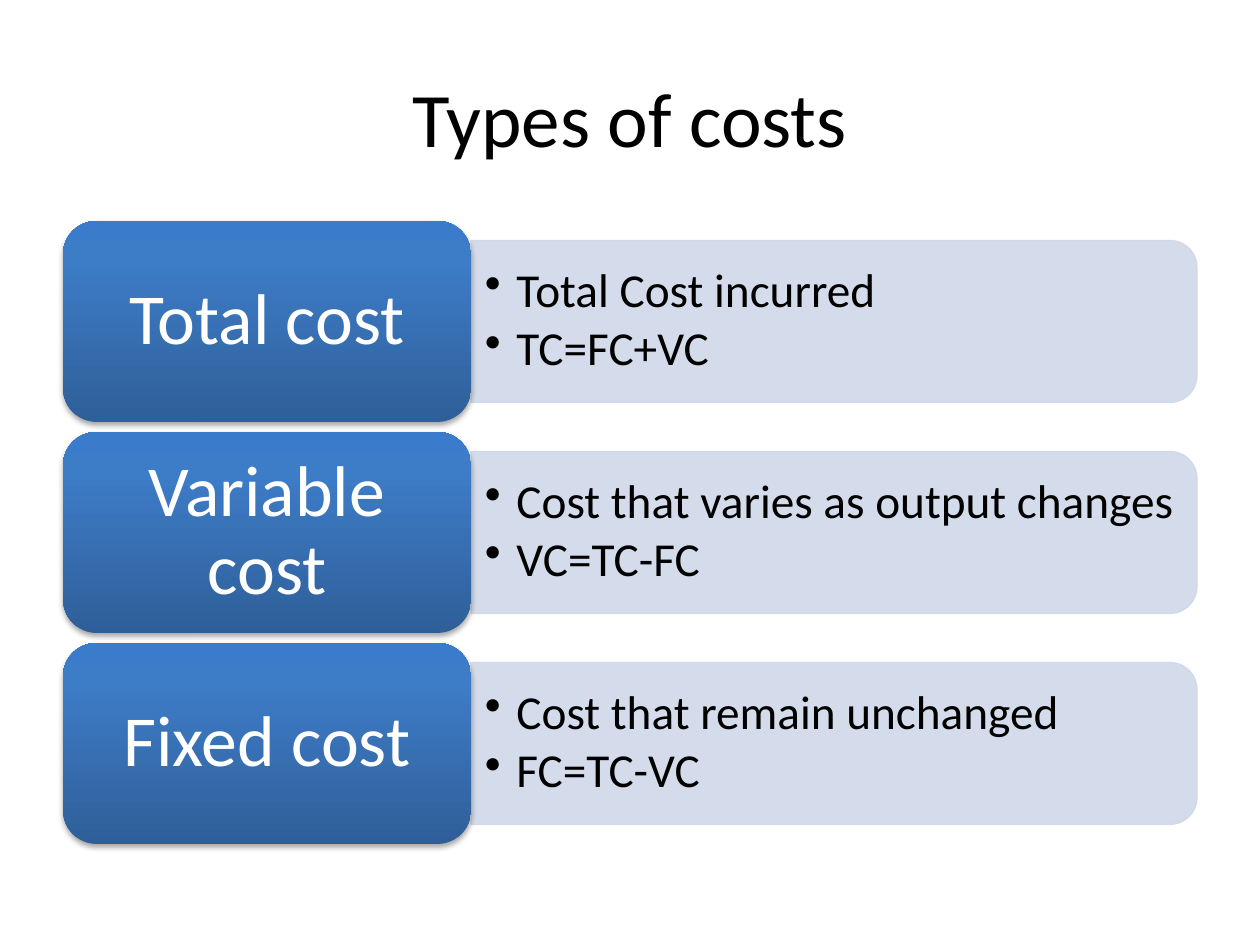
"""Build the slide on types of costs."""
from pptx import Presentation
from pptx import util as u
from pptx.dml.color import RGBColor
from pptx.enum import shapes, text
from pptx.oxml import parse_xml
from pptx.oxml.ns import nsdecls, qn
from lxml import etree

SCALE = 914400 / 126
FONT = "Calibri"
STOPS = [(0, "2F5F99"), (80, "3D7CC7"), (100, "3A7CCB")]
ROWS = [
    ("Total cost", ["Total Cost incurred", "TC=FC+VC"]),
    ("Variable cost", ["Cost that varies as output changes", "VC=TC-FC"]),
    ("Fixed cost", ["Cost that remain unchanged", "FC=TC-VC"]),
]
LEFT, TOP, PITCH = 63, 221, 211
PILL_W, PILL_H = 408, 201
PANEL_W, PANEL_H = 726, 162


def px(num):
    """Turn pixels into EMU."""
    return u.Emu(round(num * SCALE))


def box(*nums):
    """Turn left, top, width and height into EMU."""
    return [px(num) for num in nums]


def color(code):
    """Turn a hex string into a colour."""
    return RGBColor.from_string(code)


def style(frame, size, code, align, pad):
    """Format all the text of a frame."""
    frame.word_wrap = True
    frame.vertical_anchor = text.MSO_ANCHOR.MIDDLE
    frame.margin_left = frame.margin_right = px(pad[0])
    frame.margin_top = frame.margin_bottom = px(pad[1])
    for para in frame.paragraphs:
        para.alignment = align
        for run in para.runs:
            run.font.name = FONT
            run.font.size = u.Pt(size)
            run.font.color.rgb = color(code)


def add_title(slide, words):
    """Place and format the title."""
    title = slide.shapes.title
    title.left, title.top, title.width, title.height = box(63, 38, 1134, 157)
    title.text_frame.text = words
    style(title.text_frame, 44, "000000", text.PP_ALIGN.CENTER, (13, 6))


def add_panel(slide, left, mid):
    """Draw a pale panel with round corners on its right side."""
    kind = shapes.MSO_SHAPE.ROUND_2_SAME_RECTANGLE
    place = box(left + (PANEL_W - PANEL_H) / 2, mid - PANEL_W / 2, PANEL_H, PANEL_W)
    panel = slide.shapes.add_shape(kind, *place)
    panel.rotation = 90
    panel.shadow.inherit = False
    panel.fill.solid()
    panel.fill.fore_color.rgb = color("D0D8E8")
    panel.line.color.rgb = color("D0D8E8")
    panel.line.width = u.Pt(0.75)
    for tint in panel.element.spPr.iter(qn("a:srgbClr")):
        etree.SubElement(tint, qn("a:alpha"), val="90000")


def add_list(slide, left, mid, items):
    """Write the bullet points over a panel."""
    high = 145
    area = slide.shapes.add_textbox(*box(left, mid - high / 2, PANEL_W - 8, high))
    frame = area.text_frame
    frame.text = "\n".join(items)
    style(frame, 27, "000000", text.PP_ALIGN.LEFT, (14, 7))
    for para in frame.paragraphs:
        para.level = 1
        para.line_spacing = 0.9
        para.space_after = u.Pt(4)
        props = para._p.get_or_add_pPr()
        props.set("marL", str(u.Inches(0.25)))
        props.set("indent", str(-u.Inches(0.25)))
        etree.SubElement(props, qn("a:buChar"), char="•")


def shade(shape):
    """Give a shape the blue gradient and a soft shadow."""
    shape.fill.background()
    shape.line.fill.background()
    shape.shadow.inherit = False
    stops = "".join(
        f'<a:gs pos="{pos * 1000}"><a:srgbClr val="{code}"/></a:gs>' for pos, code in STOPS
    )
    props = shape.element.spPr
    props.replace(props.find(qn("a:noFill")), parse_xml(
        f'<a:gradFill {nsdecls("a")} rotWithShape="1"><a:gsLst>{stops}</a:gsLst>'
        '<a:lin ang="16200000" scaled="0"/></a:gradFill>'
    ))
    props.find(qn("a:effectLst")).append(parse_xml(
        f'<a:outerShdw {nsdecls("a")} blurRad="40000" dist="23000" dir="5400000" '
        'rotWithShape="0"><a:srgbClr val="000000"><a:alpha val="35000"/>'
        '</a:srgbClr></a:outerShdw>'
    ))


def add_pill(slide, top, words):
    """Draw a blue rounded box with a cost name."""
    kind = shapes.MSO_SHAPE.ROUNDED_RECTANGLE
    pill = slide.shapes.add_shape(kind, *box(LEFT, top, PILL_W, PILL_H))
    shade(pill)
    pill.text_frame.text = words
    style(pill.text_frame, 41, "FFFFFF", text.PP_ALIGN.CENTER, (21, 11))
    pill.text_frame.paragraphs[0].line_spacing = 0.9


def main():
    """Build and save the slide."""
    deck = Presentation()
    deck.slide_width, deck.slide_height = u.Inches(10), u.Inches(7.5)
    slide = deck.slides.add_slide(deck.slide_layouts[5])
    add_title(slide, "Types of costs")
    for row, (name, items) in enumerate(ROWS):
        top = TOP + row * PITCH
        mid = top + PILL_H / 2
        add_panel(slide, LEFT + PILL_W, mid)
        add_list(slide, LEFT + PILL_W, mid, items)
        add_pill(slide, top, name)
    deck.save("out.pptx")


if __name__ == "__main__":
    main()
